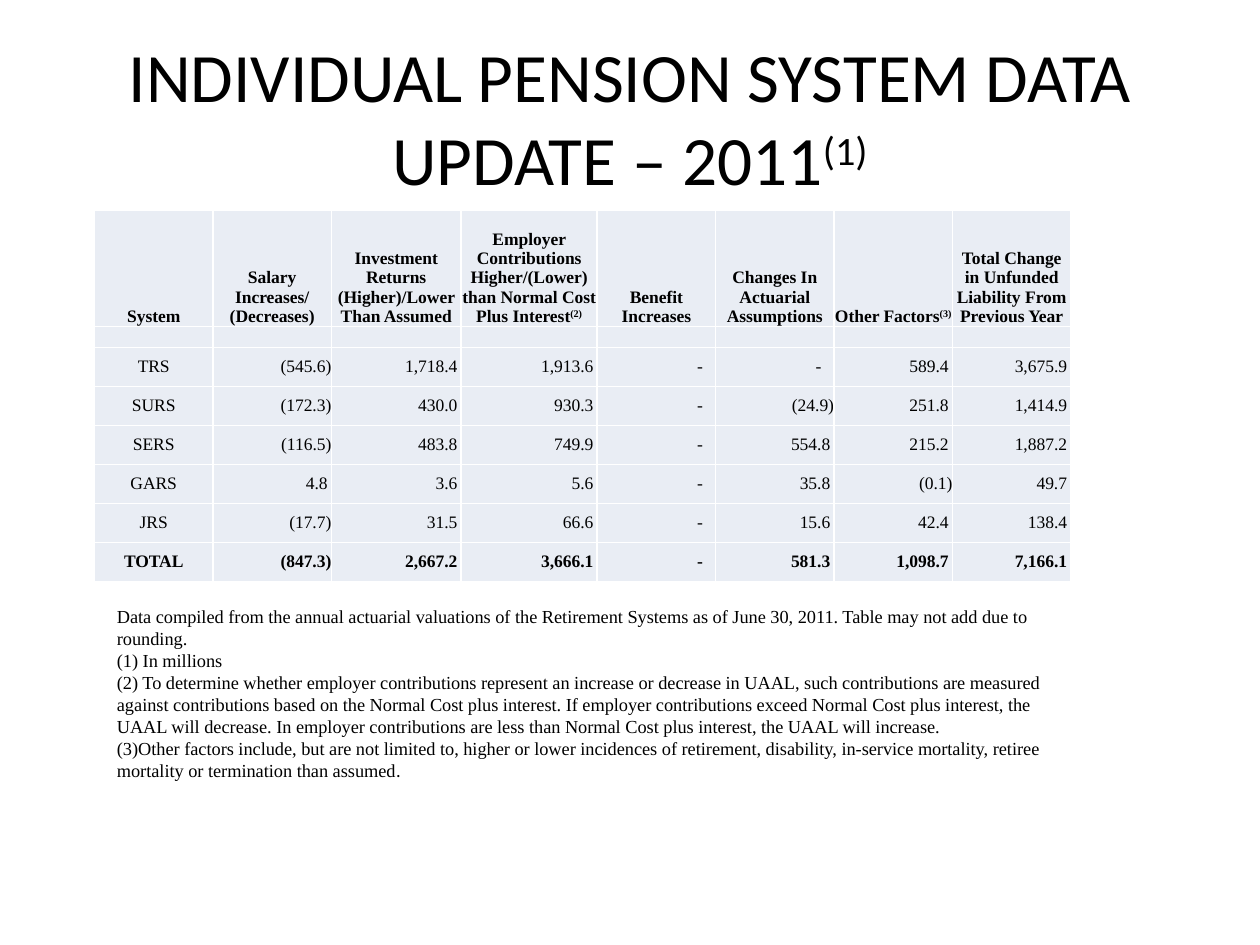
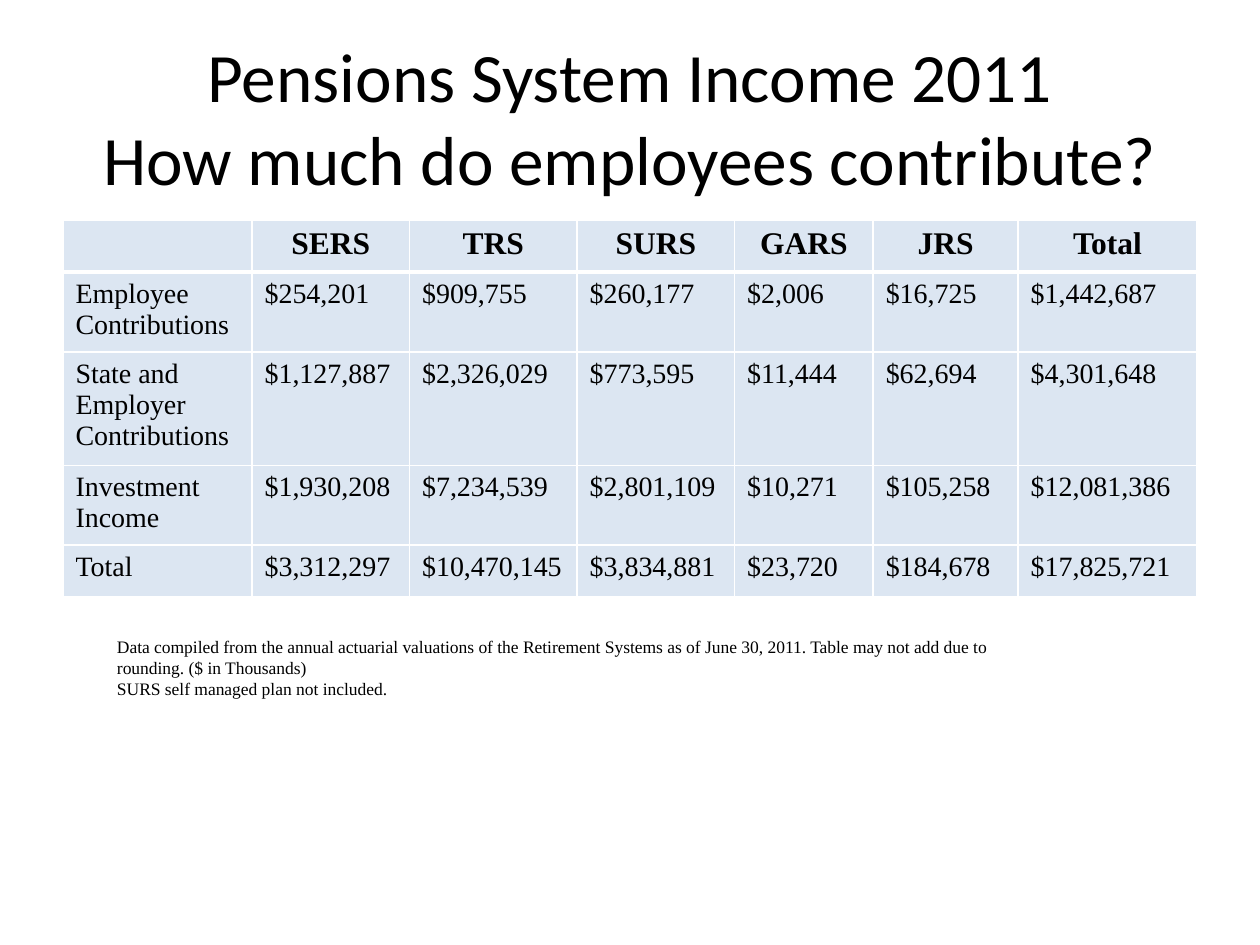
"""Build two slides of pension system tables with notes."""
from lxml import etree
from pptx import Presentation
from pptx.dml.color import RGBColor
from pptx.enum.text import MSO_ANCHOR, PP_ALIGN
from pptx.oxml.ns import qn
from pptx.util import Inches, Pt

LEFT, MID, RIGHT = PP_ALIGN.LEFT, PP_ALIGN.CENTER, PP_ALIGN.RIGHT
TOP, CENTER, BASE = MSO_ANCHOR.TOP, MSO_ANCHOR.MIDDLE, MSO_ANCHOR.BOTTOM

COLORS = {"text": "000000", "line": "FFFFFF", "gray": "E9EDF4", "blue": "DCE6F2"}
SANS, SERIF = "Calibri", "Times New Roman"
SUP = "^"
SOURCE = ("Data compiled from the annual actuarial valuations of the Retirement "
          "Systems as of June 30, 2011. Table may not add due to rounding.")

CHANGE = {
    "title": ["INDIVIDUAL PENSION SYSTEM DATA UPDATE – 2011^(1)"],
    "rows": [
        ["System", "Salary Increases/ (Decreases)",
         "Investment Returns (Higher)/Lower Than Assumed",
         "Employer Contributions Higher/(Lower) than Normal Cost Plus Interest^(2)",
         "Benefit Increases", "Changes In Actuarial Assumptions",
         "Other Factors^(3)",
         "Total Change in Unfunded Liability From Previous Year"],
        [""] * 8,
        ["TRS", "(545.6)", "1,718.4", "1,913.6", "-", "-", "589.4", "3,675.9"],
        ["SURS", "(172.3)", "430.0", "930.3", "-", "(24.9)", "251.8", "1,414.9"],
        ["SERS", "(116.5)", "483.8", "749.9", "-", "554.8", "215.2", "1,887.2"],
        ["GARS", "4.8", "3.6", "5.6", "-", "35.8", "(0.1)", "49.7"],
        ["JRS", "(17.7)", "31.5", "66.6", "-", "15.6", "42.4", "138.4"],
        ["TOTAL", "(847.3)", "2,667.2", "3,666.1", "-", "581.3", "1,098.7", "7,166.1"],
    ],
    "at": (0.75, 1.67),
    "cols": [0.94, 0.94, 1.03, 1.08] + [0.94] * 4,
    "heights": [0.92, 0.15] + [0.31] * 6,
    "fill": "gray",
    "notes": [
        SOURCE,
        "(1) In millions",
        "(2) To determine whether employer contributions represent an increase or "
        "decrease in UAAL, such contributions are measured against contributions "
        "based on the Normal Cost plus interest. If employer contributions exceed "
        "Normal Cost plus interest, the UAAL will decrease. In employer contributions "
        "are less than Normal Cost plus interest, the UAAL will increase.",
        "(3)Other factors include, but are not limited to, higher or lower incidences "
        "of retirement, disability, in-service mortality, retiree mortality or "
        "termination than assumed",
    ],
    "box": (0.83, 4.75, 7.83, 1.51),
    "size": 10.5,
}

INCOME = {
    "title": ["Pensions System Income 2011", "How much do employees contribute?"],
    "rows": [
        ["", "SERS", "TRS", "SURS", "GARS", "JRS", "Total"],
        ["Employee Contributions", "$254,201", "$909,755", "$260,177", "$2,006",
         "$16,725", "$1,442,687"],
        ["State and Employer Contributions", "$1,127,887", "$2,326,029", "$773,595",
         "$11,444", "$62,694", "$4,301,648"],
        ["Investment Income", "$1,930,208", "$7,234,539", "$2,801,109", "$10,271",
         "$105,258", "$12,081,386"],
        ["Total", "$3,312,297", "$10,470,145", "$3,834,881", "$23,720", "$184,678",
         "$17,825,721"],
    ],
    "at": (0.5, 1.75),
    "cols": [1.5, 1.25, 1.33, 1.25, 1.1, 1.15, 1.42],
    "heights": [0.41, 0.59, 0.84, 0.59, 0.41],
    "fill": "blue",
    "notes": [SOURCE + " ($ in Thousands)", "SURS self managed plan not included."],
    "box": (0.83, 5, 7.58, 0.91),
    "size": 10,
}


def color(name):
    return RGBColor.from_string(COLORS[name])


def write(para, text, size, face=SERIF, bold=False, align=LEFT):
    para.alignment = align
    font = para.font
    font.size, font.name, font.bold = Pt(size), face, bold
    font.color.rgb = color("text")
    for i, part in enumerate(text.split(SUP)):
        if part:
            run = para.add_run()
            run.text = part
            if i:
                run.font._element.set("baseline", "30000")
    if not text:
        end = etree.SubElement(para._p, qn("a:endParaRPr"))
        end.set("sz", str(size * 100))


def add_text(slide, lines, box, size, face=SERIF, align=LEFT, anchor=TOP):
    frame = slide.shapes.add_textbox(*map(Inches, box)).text_frame
    frame.word_wrap = True
    frame.vertical_anchor = anchor
    for i, line in enumerate(lines):
        para = frame.add_paragraph() if i else frame.paragraphs[0]
        write(para, line, size, face, align=align)
    return frame


def edge(cell, **widths):
    props = cell._tc.get_or_add_tcPr()
    for side in "LRTB":
        line = etree.SubElement(props, qn("a:ln" + side))
        line.set("w", str(Pt(widths.get(side, 1))))
        fill = etree.SubElement(line, qn("a:solidFill"))
        etree.SubElement(fill, qn("a:srgbClr")).set("val", COLORS["line"])


def add_table(slide, data, style):
    rows, cols, heights = data["rows"], data["cols"], data["heights"]
    area = (*data["at"], sum(cols), sum(heights))
    table = slide.shapes.add_table(len(rows), len(cols), *map(Inches, area)).table
    table.first_row = table.horz_banding = False
    for col, width in zip(table.columns, cols):
        col.width = Inches(width)
    for row, height in zip(table.rows, heights):
        row.height = Inches(height)
    for r, row in enumerate(rows):
        for c, text in enumerate(row):
            cell = table.cell(r, c)
            style(cell, text, r, c)
            cell.fill.solid()
            cell.fill.fore_color.rgb = color(data["fill"])


def style_change(cell, text, r, c):
    edge(cell)
    cell.margin_left = cell.margin_top = cell.margin_bottom = 0
    pad = 0
    if r > 1 and c:
        pad = 0.1 if text == "-" else 0 if text.endswith(")") else 0.03
    cell.margin_right = Inches(pad)
    cell.vertical_anchor = CENTER if r else BASE
    last = len(CHANGE["rows"]) - 1
    align = RIGHT if r and c else MID
    write(cell.text_frame.paragraphs[0], text, 10, bold=r in (0, last), align=align)


def style_income(cell, text, r, c):
    edge(cell, **({"B": 3} if r == 0 else {"T": 3} if r == 1 else {}))
    size, align = (16, LEFT) if r else (18, MID)
    write(cell.text_frame.paragraphs[0], text, size, bold=r == 0, align=align)


def add_slide(deck, data, style):
    slide = deck.slides.add_slide(deck.slide_layouts[6])
    add_text(slide, data["title"], (0.5, 0.3, 9, 1.25), 39.6, SANS, MID, CENTER)
    add_table(slide, data, style)
    return add_text(slide, data["notes"], data["box"], data["size"])


def main():
    deck = Presentation()
    deck.slide_width, deck.slide_height = Inches(10), Inches(7.5)
    notes = add_slide(deck, CHANGE, style_change)
    stop = notes.paragraphs[-1].add_run()
    stop.text, stop.font.name = ".", SANS
    add_slide(deck, INCOME, style_income)
    deck.save("out.pptx")


if __name__ == "__main__":
    main()
